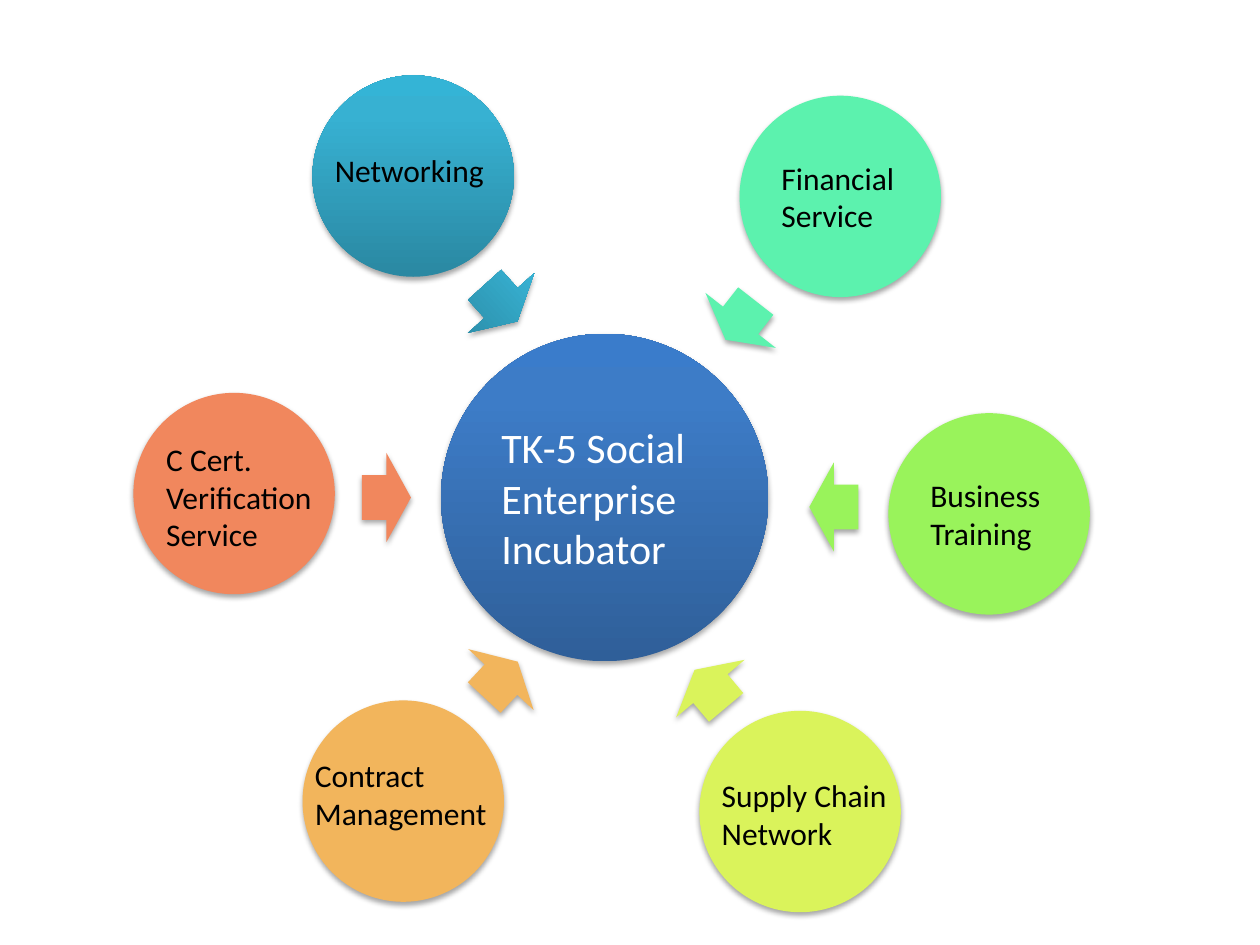
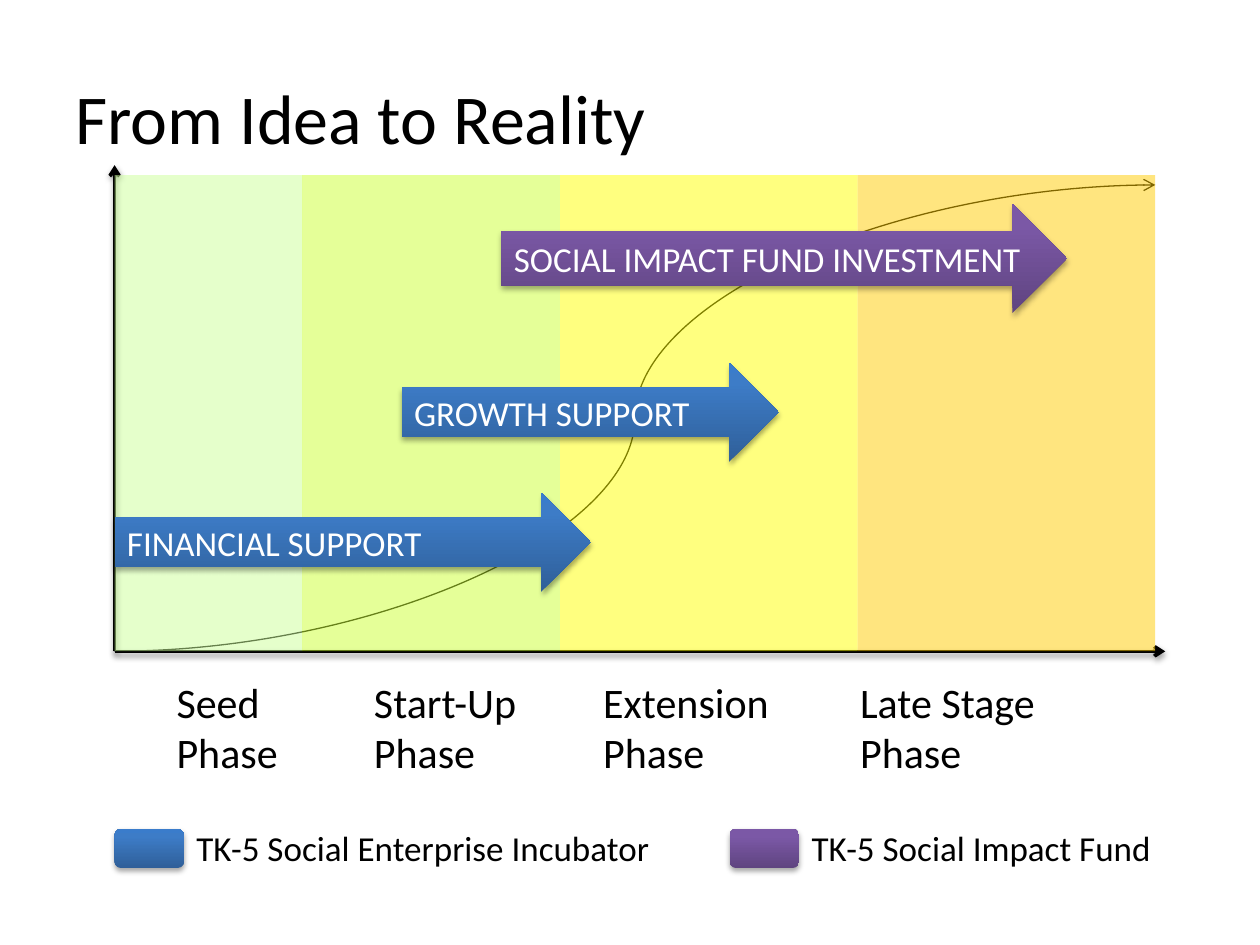
from copy import deepcopy

from lxml import etree
from pptx import Presentation
from pptx.dml.color import RGBColor
from pptx.enum import shapes, text
from pptx.oxml import ns
from pptx.util import Cm, Pt

FONT = "Calibri"
BLACK = RGBColor(0x00, 0x00, 0x00)
WHITE = RGBColor(0xFF, 0xFF, 0xFF)
MINT = RGBColor(0x5C, 0xF2, 0xAE)
GREEN = RGBColor(0x99, 0xF3, 0x5B)
LIME = RGBColor(0xDA, 0xF3, 0x5B)
AMBER = RGBColor(0xF2, 0xB5, 0x5C)
CORAL = RGBColor(0xF1, 0x87, 0x5D)
SEED = RGBColor(0xCC, 0xFF, 0x99)
START_UP = RGBColor(0xCC, 0xFF, 0x33)
EXTENSION = RGBColor(0xFF, 0xFF, 0x00)
LATE_STAGE = RGBColor(0xFF, 0xCC, 0x00)

# Gradients run from the bottom edge to the top edge
STOPS = (0, 0.8, 1)
BLUE = (RGBColor(0x2F, 0x5F, 0x99), RGBColor(0x3D, 0x7C, 0xC7), RGBColor(0x3A, 0x7C, 0xCB))
TEAL = (RGBColor(0x2A, 0x88, 0xA2), RGBColor(0x37, 0xB1, 0xD2), RGBColor(0x34, 0xB4, 0xD6))
PURPLE = (RGBColor(0x5F, 0x44, 0x80), RGBColor(0x7B, 0x58, 0xA6), RGBColor(0x7C, 0x57, 0xA8))

SHAPE = shapes.MSO_SHAPE
LINE = shapes.MSO_CONNECTOR
INCUBATOR = "TK-5 Social Enterprise Incubator"
FUND = "TK-5 Social Impact Fund"


# Shared parts
def add_child(parent, tag, **attributes):
    return etree.SubElement(parent, ns.qn(tag), attributes)


def set_effects(item, strength=0, distance=1.8):
    """Replace the theme effect; a strength in percent gives a shadow below."""
    effects = add_child(item._element.spPr, "a:effectLst")
    if strength:
        shadow = add_child(effects, "a:outerShdw", blurRad=str(Pt(3.1)), dist=str(Pt(distance)),
                           dir="5400000", rotWithShape="0")
        color = add_child(shadow, "a:srgbClr", val=str(BLACK))
        add_child(color, "a:alpha", val=str(strength * 1000))


def set_fill(shape, paint):
    if isinstance(paint, RGBColor):
        shape.fill.solid()
        shape.fill.fore_color.rgb = paint
        return
    shape.fill.gradient()
    shape.fill.gradient_angle = 90
    stop_list = next(shape._element.spPr.iter(ns.qn("a:gsLst")))
    stop_list.append(deepcopy(stop_list[-1]))
    for stop, position, color in zip(shape.fill.gradient_stops, STOPS, paint):
        stop.position = position
        stop.color.rgb = color


def write(frame, words, size, color):
    frame.text = words
    for para in frame.paragraphs:
        for span in para.runs:
            span.font.name = FONT
            span.font.size = Pt(size)
            span.font.color.rgb = color


def add_block(page, kind, box, paint, words="", size=18, color=WHITE, shadow=35):
    shape = page.shapes.add_shape(kind, *map(Cm, box))
    set_fill(shape, paint)
    shape.line.fill.background()
    set_effects(shape, shadow)
    if words:
        write(shape.text_frame, words, size, color)
    return shape


def add_label(page, box, words, size, wrap=True):
    label = page.shapes.add_textbox(*map(Cm, box))
    label.text_frame.word_wrap = wrap
    write(label.text_frame, words, size, BLACK)


def add_arrow_line(page, kind, start, end, width, shadow=0):
    line = page.shapes.add_connector(kind, *map(Cm, start + end))
    line.line.color.rgb = BLACK
    line.line.width = Pt(width)
    add_child(line.line._get_or_add_ln(), "a:tailEnd", type="arrow")
    set_effects(line, shadow, 1.6)


# Slide 1: services around the incubator
HUB_SIZE, SERVICE_SIZE = 6.6, 4.06
ARROW_WIDTH, ARROW_HEIGHT = 0.99, 1.8
# words, paint, circle centre and arrow centre from the hub centre, arrow rotation,
# label box from the circle's corner (None: the words sit in the circle), wrap
SERVICES = [
    ("Networking", TEAL, (-3.86, -6.48), (-2.09, -3.92), 48, (0.2, 1.4, 3.56, 1.02), False),
    ("Financial Service", MINT, (4.75, -6.07), (2.74, -3.57), 128, None, True),
    ("Business Training", GREEN, (7.75, 0.33), (4.62, 0.19), 180, None, True),
    ("Supply Chain Network", LIME, (3.94, 6.33), (2.13, 3.85), 230, (0.2, 1.19, 4.19, 1.8), True),
    ("Contract Management", AMBER, (-4.06, 6.12), (-2.09, 3.67), 313, (0, 0.99, 4.19, 1.8), True),
    ("C Cert. Verification Service", CORAL, (-7.47, -0.08), (-4.4, 0), 0,
     (0.41, 0.82, 4.6, 2.57), True),
]


def centred(x, y, width, height):
    return x - width / 2, y - height / 2, width, height


def build_wheel(page, x, y):
    add_block(page, SHAPE.OVAL, centred(x, y, HUB_SIZE, HUB_SIZE), BLUE, INCUBATOR, 24)
    for words, paint, (dx, dy), (arrow_dx, arrow_dy), turn, label, wrap in SERVICES:
        circle = centred(x + dx, y + dy, SERVICE_SIZE, SERVICE_SIZE)
        add_block(page, SHAPE.OVAL, circle, paint, "" if label else words, color=BLACK)
        arrow = add_block(page, SHAPE.RIGHT_ARROW,
                          centred(x + arrow_dx, y + arrow_dy, ARROW_WIDTH, ARROW_HEIGHT), paint)
        arrow.rotation = turn
        if label:
            label_x, label_y, width, height = label
            add_label(page, (circle[0] + label_x, circle[1] + label_y, width, height),
                      words, 18, wrap)


# Slide 2: growth phases
# words, band colour, band width, label offset, label width
PHASES = [
    ("Seed Phase", SEED, 3.78, 1, 3),
    ("Start-Up Phase", START_UP, 5.2, 4.98, 4.19),
    ("Extension Phase", EXTENSION, 6, 9.6, 4.6),
    ("Late Stage Phase", LATE_STAGE, 6, 14.78, 5.6),
]
# words, paint, box from the chart's corner
SUPPORTS = [
    ("FINANCIAL SUPPORT", BLUE, (0, 6.4, 9.6, 2)),
    ("GROWTH SUPPORT", BLUE, (5.79, 3.78, 7.6, 2)),
    ("SOCIAL IMPACT FUND INVESTMENT", PURPLE, (7.8, 0.58, 11.4, 2.2)),
]
# words, paint, key offset, label width
LEGEND = [(INCUBATOR, BLUE, 0, 9.75), (FUND, PURPLE, 12.4, 7.42)]


def build_title(page, words):
    title = page.shapes.title
    title.left, title.top, title.width, title.height = map(Cm, (1.27, 0.76, 22.86, 3.18))
    write(title.text_frame, words, 40, BLACK)
    title.text_frame.vertical_anchor = text.MSO_ANCHOR.MIDDLE
    title.text_frame.paragraphs[0].alignment = text.PP_ALIGN.LEFT


def build_phase_chart(page, left, top, width, height):
    bottom, right = top + height, left + width
    origin, overshoot = (left, bottom), 0.2
    # Axes and growth curve
    add_arrow_line(page, LINE.STRAIGHT, origin, (right + overshoot, bottom), 2, 38)
    add_arrow_line(page, LINE.CURVE, origin, (right, top + overshoot), 0.75)
    add_arrow_line(page, LINE.STRAIGHT, origin, (left, top - overshoot), 2, 38)
    # Translucent phase bands with their names below
    band_left = left
    for words, color, band_width, label_x, label_width in PHASES:
        band = add_block(page, SHAPE.RECTANGLE, (band_left, top, band_width, height),
                         color, shadow=0)
        add_child(next(band._element.spPr.iter(ns.qn("a:srgbClr"))), "a:alpha", val="50000")
        add_label(page, (left + label_x, bottom + 0.38, label_width, 2.31), words, 24)
        band_left += band_width
    # Support arrows
    for words, paint, (x, y, arrow_width, arrow_height) in SUPPORTS:
        add_block(page, SHAPE.RIGHT_ARROW, (left + x, top + y, arrow_width, arrow_height),
                  paint, words, 20)


def build_legend(page, left, top):
    key_width = 1.4
    for words, paint, offset, label_width in LEGEND:
        x = left + offset
        add_block(page, SHAPE.ROUNDED_RECTANGLE, (x, top, key_width, 0.79), paint)
        add_label(page, (x + key_width, top - 0.18, label_width, 1.12), words, 20, wrap=False)


def main():
    deck = Presentation()
    deck.slide_width, deck.slide_height = Cm(25.4), Cm(19.05)
    title_only, blank = deck.slide_layouts[5], deck.slide_layouts[6]

    build_wheel(deck.slides.add_slide(blank), 12.19, 10.03)

    page = deck.slides.add_slide(title_only)
    build_phase_chart(page, 2.31, 3.53, 20.98, 9.6)
    build_legend(page, 2.31, 16.71)
    build_title(page, "From Idea to Reality")

    deck.save("out.pptx")


if __name__ == "__main__":
    main()
